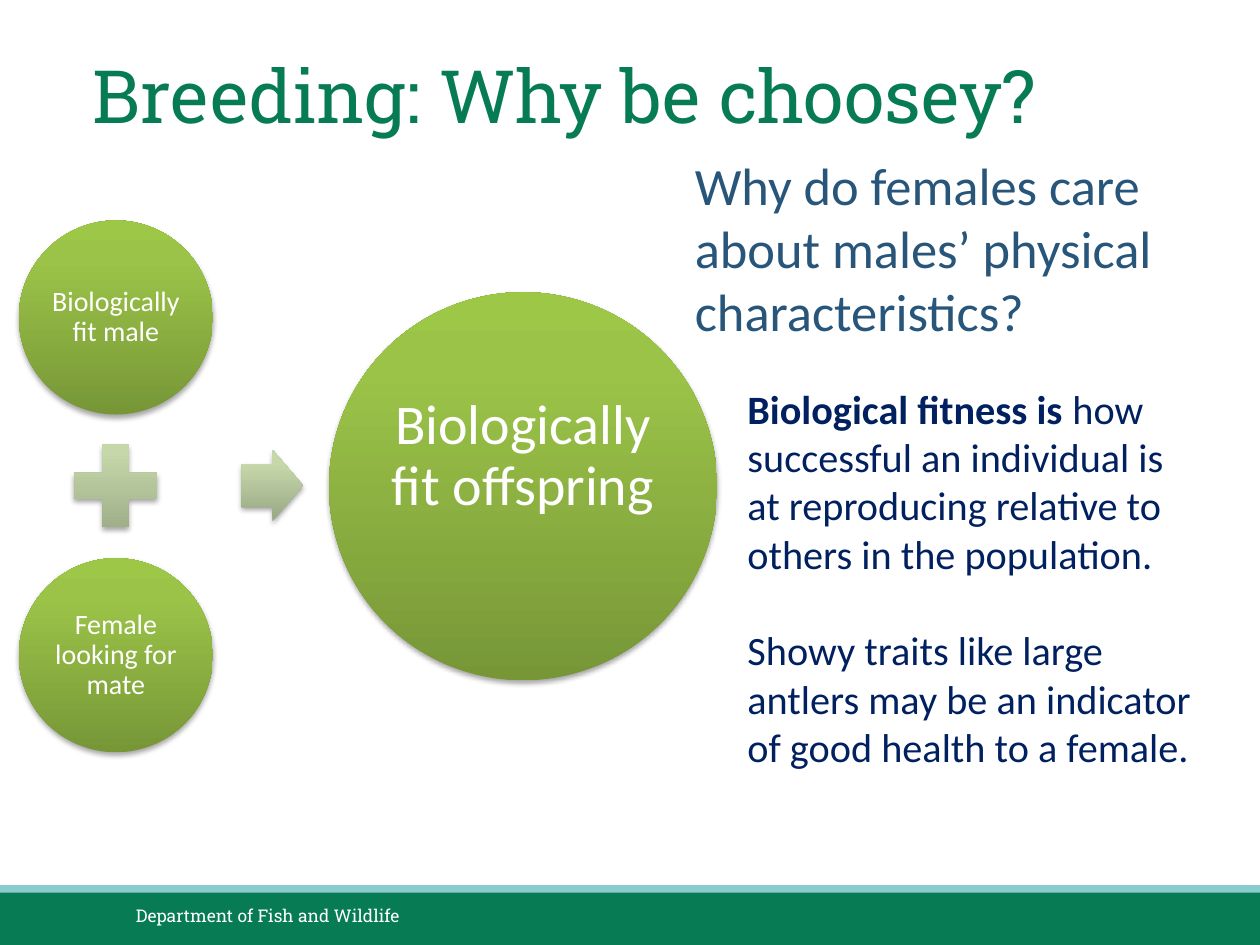
from copy import deepcopy
from typing import NamedTuple

from pptx import Presentation
from pptx.dml.color import RGBColor
from pptx.enum.shapes import MSO_SHAPE
from pptx.enum.text import MSO_ANCHOR, PP_ALIGN
from pptx.oxml import parse_xml
from pptx.oxml.ns import nsdecls, qn
from pptx.util import Pt

RECT, OVAL = MSO_SHAPE.RECTANGLE, MSO_SHAPE.OVAL
PLUS, ARROW = MSO_SHAPE.MATH_PLUS, MSO_SHAPE.RIGHT_ARROW
LEFT, CENTER = PP_ALIGN.LEFT, PP_ALIGN.CENTER
TOP, MIDDLE = MSO_ANCHOR.TOP, MSO_ANCHOR.MIDDLE

SANS, SLAB = "Calibri", "Roboto Slab"
GREEN, TEAL, WHITE, BLUE, NAVY = "067B54", "8ACCCE", "FFFFFF", "28557A", "002060"
LIME = ((0, "779737"), (0.8, "9BC348"), (1, "9DC746"))
SAGE = ((0, "98A683"), (0.8, "C6D8AA"), (1, "C7DAAA"))


class Box(NamedTuple):
    left: float
    top: float
    width: float
    height: float


class Circle(NamedTuple):
    text: str
    left: float
    top: float
    diameter: float
    size: float
    inset: float
    lift: float = 0  # how far the label sits above the centre


class Symbol(NamedTuple):
    kind: MSO_SHAPE
    box: Box


CIRCLES = [
    Circle("Biologically fit male", 10.8, 126, 110.9, 16, 1.4),
    Circle("Female looking for mate", 10.8, 319, 110.9, 16, 1.4),
    Circle("Biologically fit offspring", 188, 167, 221.8, 32, 2.9, 16.7),
]
SYMBOLS = [
    Symbol(PLUS, Box(34, 245.5, 64.1, 64.1)),
    Symbol(ARROW, Box(138, 257, 35.3, 41)),
]


def rgb(color: str) -> RGBColor:
    return RGBColor.from_string(color)


def add_text(slide, box: Box, paragraphs, *, size: float, color: str,
             font: str = SANS, align=LEFT, anchor=TOP, line_spacing=None,
             gap: float = 0, insets=(7.2, 3.6, 7.2, 3.6)) -> None:
    """Each paragraph is a list of (text, bold) runs; gap parts the paragraphs."""
    tf = slide.shapes.add_textbox(*map(Pt, box)).text_frame
    tf.word_wrap = True
    tf.vertical_anchor = anchor
    tf.margin_left, tf.margin_top, tf.margin_right, tf.margin_bottom = map(Pt, insets)
    for i, runs in enumerate(paragraphs):
        p = tf.add_paragraph() if i else tf.paragraphs[0]
        p.alignment = align
        if line_spacing:
            p.line_spacing = line_spacing
        if i:
            p.space_before = Pt(gap)
        for text, bold in runs:
            r = p.add_run()
            r.text = text
            r.font.name, r.font.size, r.font.bold = font, Pt(size), bold
            r.font.color.rgb = rgb(color)


def add_shape(slide, kind: MSO_SHAPE, box: Box):
    sp = slide.shapes.add_shape(kind, *map(Pt, box))
    sp.shadow.inherit = False
    sp.line.fill.background()
    return sp


def add_bar(slide, box: Box, color: str) -> None:
    sp = add_shape(slide, RECT, box)
    sp.fill.solid()
    sp.fill.fore_color.rgb = rgb(color)


def add_glossy(slide, kind: MSO_SHAPE, box: Box, stops):
    """Shape with a bottom-to-top gradient and a soft shadow below."""
    sp = add_shape(slide, kind, box)
    sp.fill.gradient()
    sp.fill.gradient_angle = 90
    props = sp._element.spPr
    stop_list = props.find(".//" + qn("a:gsLst"))
    stop_list.append(deepcopy(stop_list[-1]))
    for stop, (position, color) in zip(sp.fill.gradient_stops, stops):
        stop.position = position
        stop.color.rgb = rgb(color)
    props.find(qn("a:effectLst")).append(parse_xml(
        f'<a:outerShdw {nsdecls("a")} blurRad="{Pt(3.1)}" dist="{Pt(1.8)}" '
        'dir="5400000" rotWithShape="0"><a:srgbClr val="000000">'
        '<a:alpha val="35000"/></a:srgbClr></a:outerShdw>'))
    return sp


def add_circle(slide, c: Circle) -> None:
    add_glossy(slide, OVAL, Box(c.left, c.top, c.diameter, c.diameter), LIME)
    side = c.diameter * 0.707  # square inscribed in the circle
    margin = (c.diameter - side) / 2
    add_text(slide, Box(c.left + margin, c.top + margin - c.lift, side, side),
             [[(c.text, False)]], size=c.size, color=WHITE, align=CENTER,
             anchor=MIDDLE, line_spacing=0.9, insets=(c.inset,) * 4)


def main() -> None:
    prs = Presentation()
    prs.slide_width, prs.slide_height = Pt(720), Pt(540)
    slide = prs.slides.add_slide(prs.slide_layouts[6])

    # Footer
    add_bar(slide, Box(0, 509.8, 720, 30.2), GREEN)
    add_bar(slide, Box(0, 505.8, 720, 4.3), TEAL)
    add_text(slide, Box(70.6, 512.6, 228, 21.6),
             [[("Department of Fish and Wildlife", False)]],
             size=10, color=WHITE, font=SLAB, anchor=MIDDLE)

    # Title and question
    add_text(slide, Box(36, 18, 648, 72), [[("Breeding: Why be choosey?", False)]],
             size=42, color=GREEN, font=SLAB, anchor=MIDDLE,
             insets=(17, 3.6, 7.2, 3.6))
    add_text(slide, Box(390, 84, 318, 117),
             [[("Why do females care about males’ physical characteristics?", False)]],
             size=30, color=BLUE)

    # Diagram: male plus female gives offspring
    for symbol in SYMBOLS:
        sp = add_glossy(slide, symbol.kind, symbol.box, SAGE)
        if symbol.kind == ARROW:
            sp.adjustments[0] = 0.6
    for circle in CIRCLES:
        add_circle(slide, circle)

    # Explanation
    add_text(slide, Box(420, 216, 276, 258), [
        [("Biological fitness is ", True),
         ("how successful an individual is at reproducing relative to others "
          "in the population.", False)],
        [("Showy traits like large antlers may be an indicator of good health "
          "to a female.", False)],
    ], size=23, color=NAVY, gap=27.6)

    prs.save("out.pptx")


if __name__ == "__main__":
    main()
